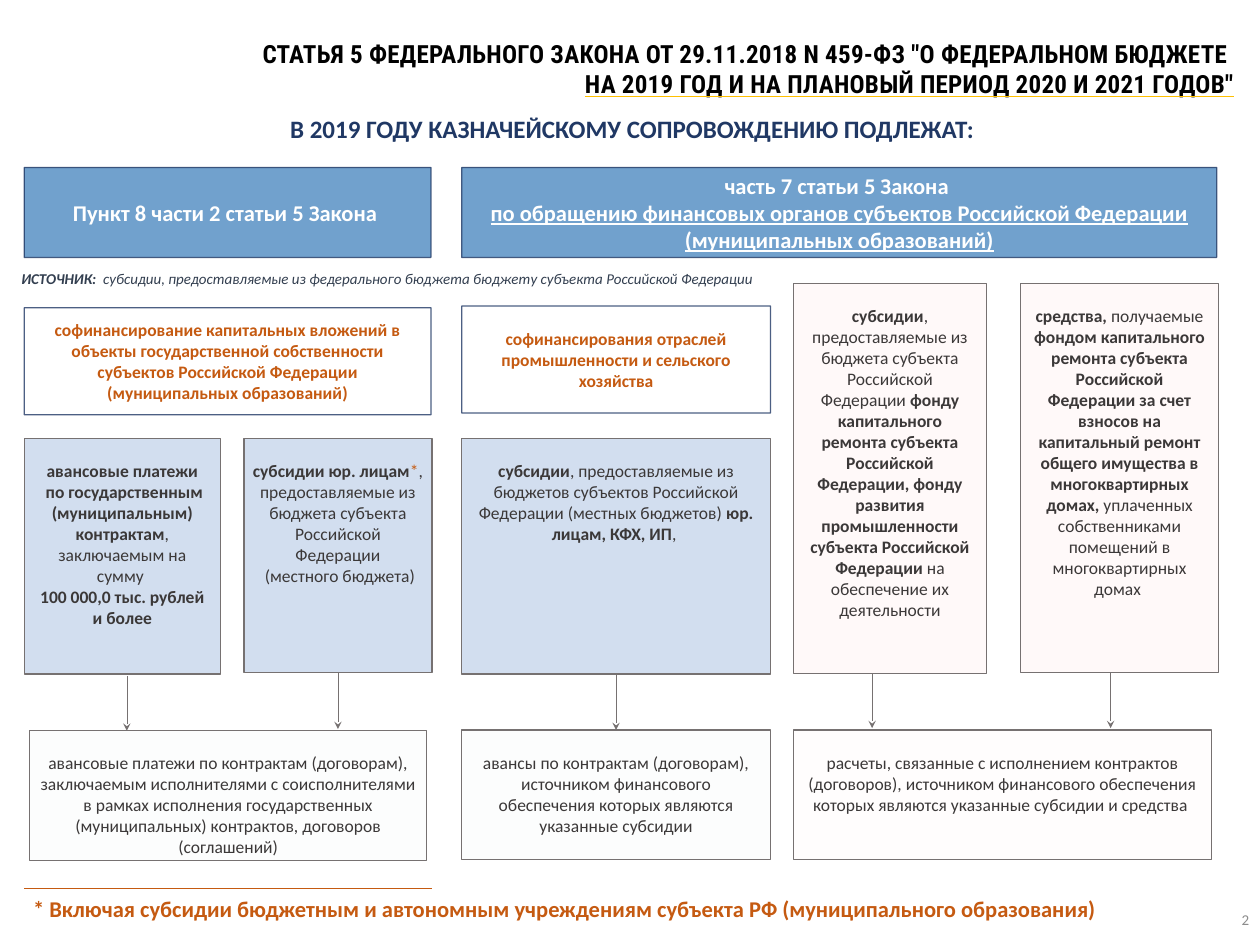
import pptx
import pptx.util
import pptx.dml.color
import pptx.enum.shapes
import pptx.enum.text
import pptx.oxml
import pptx.oxml.ns
import lxml.etree

Pt = pptx.util.Pt
qn = pptx.oxml.ns.qn
Align = pptx.enum.text.PP_ALIGN
Anchor = pptx.enum.text.MSO_ANCHOR
Kind = pptx.enum.shapes.MSO_SHAPE
Link = pptx.enum.shapes.MSO_CONNECTOR

deck = pptx.Presentation()
deck.slide_width, deck.slide_height = Pt(1008), Pt(756)
slide = deck.slides.add_slide(deck.slide_layouts[6])


def hue(code):
    return pptx.dml.color.RGBColor.from_string(code)


def put(text, area, size=14, color="3B3838", bold=False, italic=False, font="Calibri",
        align=Align.CENTER, mid=False, side=8.64, top=4.32, base=4.32,
        fill=None, line=None, alpha=(), grow=False):
    area = [Pt(n) for n in area]
    if line:
        box = slide.shapes.add_shape(Kind.RECTANGLE, *area)
        box.shadow.inherit = False
        if fill:
            box.fill.solid()
            box.fill.fore_color.rgb = hue(fill)
        else:
            box.fill.background()
        box.line.color.rgb = hue(line)
        box.line.width = Pt(1)
        for node, part in zip(box._element.spPr.iter(qn("a:srgbClr")), alpha):
            lxml.etree.SubElement(node, qn("a:alpha")).set("val", str(part * 1000))
    else:
        box = slide.shapes.add_textbox(*area)
    frame = box.text_frame
    frame.word_wrap = True
    if grow:
        frame.auto_size = pptx.enum.text.MSO_AUTO_SIZE.SHAPE_TO_FIT_TEXT
    frame.vertical_anchor = Anchor.MIDDLE if mid else Anchor.TOP
    frame.margin_left = frame.margin_right = Pt(side)
    frame.margin_top, frame.margin_bottom = Pt(top), Pt(base)
    for i, words in enumerate(text.split("\n")):
        para = frame.add_paragraph() if i else frame.paragraphs[0]
        para.alignment = align
        for j, part in enumerate(words.split("|")):
            if part == "\v":
                para.add_line_break()
            elif part:
                run = para.add_run()
                run.text = part
                run.font.size = Pt(size)
                run.font.name = font
                run.font.bold = bold or j % 2 == 1
                run.font.italic = italic
                run.font.color.rgb = hue(color)
    return box


title = put("СТАТЬЯ 5 ФЕДЕРАЛЬНОГО ЗАКОНА ОТ 29.11.2018 N 459-ФЗ \"О ФЕДЕРАЛЬНОМ БЮДЖЕТЕ \n"
            "НА 2019 ГОД И НА ПЛАНОВЫЙ ПЕРИОД 2020 И 2021 ГОДОВ\"",
            (19.4, 26.6, 976.3, 56.9), size=20, color="000000", bold=True,
            font="Roboto Condensed", align=Align.RIGHT, grow=True)
for para in title.text_frame.paragraphs:
    para.runs[0].font._element.set("spc", "20")
under = title.text_frame.paragraphs[1].runs[0].font
under.underline = True
gold = lxml.etree.Element(qn("a:uFill"))
solid = lxml.etree.SubElement(gold, qn("a:solidFill"))
lxml.etree.SubElement(solid, qn("a:srgbClr")).set("val", "FFC000")
under._element.find(qn("a:latin")).addprevious(gold)

put("В 2019 ГОДУ КАЗНАЧЕЙСКОМУ СОПРОВОЖДЕНИЮ ПОДЛЕЖАТ:", (36.7, 86.4, 938.2, 33.1),
    size=20, color="203864", bold=True, grow=True)

left, mid, right = 19.4, 369.4, 635
wide, slim = 325.4, 247
head = dict(size=18, color="FFFFFF", bold=True, mid=True,
            fill="2E75B6", line="203864", alpha=(68, 80))
put("Пункт 8 части 2 статьи 5 Закона ", (left, 134, wide, 72), **head)
law = put("часть 7 статьи 5 Закона \n"
          "по обращению финансовых органов субъектов Российской Федерации\n"
          "(муниципальных образований)", (mid, 134, 604, 72), **head)
for para in law.text_frame.paragraphs[1:]:
    para.runs[0].font.underline = True

put("|ИСТОЧНИК: | субсидии, предоставляемые из федерального бюджета бюджету "
    "субъекта Российской Федерации", (10.1, 212.4, 606.2, 21.6), size=12, color="333F50",
    italic=True, align=Align.LEFT, side=7.2, top=3.6, base=3.6, grow=True)

goal = dict(color="C55A11", bold=True, mid=True, line="203864", alpha=(80,))
put("софинансирование капитальных вложений в объекты государственной собственности "
    "субъектов Российской Федерации (муниципальных образований)",
    (left, 246.2, wide, 85.7), **goal)
put("софинансирования отраслей промышленности и сельского хозяйства",
    (mid, 244.8, slim, 85.7), **goal)

card = dict(top=17.28, line="767171")
blue = dict(card, fill="D2DEEF")
pink = dict(card, fill="FFEFEF", alpha=(33,))
put("|авансовые платежи\n| по государственным (муниципальным) контрактам|, "
    "заключаемым на сумму |\v||100 000,0 тыс. рублей и более",
    (left, 350.6, 157, 188.6), **blue)
firm = put("|субсидии юр. лицам|*||, предоставляемые из бюджета субъекта Российской Федерации\n"
           " (местного бюджета)", (195.1, 350.6, 150.5, 187.2), side=5.76, **blue)
firm.text_frame.paragraphs[0].runs[1].font.color.rgb = hue("C55A11")
farm = put("|субсидии|, предоставляемые из бюджетов субъектов Российской Федерации "
           "(местных бюджетов) |юр. лицам, КФХ, ИП|, ", (mid, 350.6, slim, 188.6), **blue)
put("|субсидии|, предоставляемые из бюджета субъекта Российской Федерации |фонду "
    "капитального ремонта субъекта Российской Федерации, фонду развития промышленности "
    "субъекта Российской Федерации |на обеспечение их деятельности",
    (right, 226.8, 154.1, 311.8), **pink)
put("|средства, |получаемые |фондом капитального ремонта субъекта Российской Федерации "
    "за счет взносов на капитальный ремонт общего имущества в многоквартирных домах, "
    "|уплаченных собственниками помещений в многоквартирных домах ",
    (816.5, 226.8, 158.4, 311), **pink)

pale = dict(card, fill="D6DCE5", alpha=(5,))
put("авансовые платежи по контрактам (договорам), заключаемым исполнителями с "
    "соисполнителями в рамках исполнения государственных (муниципальных) контрактов, "
    "договоров (соглашений)", (23.8, 584.6, 317.5, 103.7), **pale)
advance = put("авансы по контрактам (договорам), источником финансового обеспечения которых "
              "являются указанные субсидии", (mid, 584, slim, 103.7), **pale)
put("расчеты, связанные с исполнением контрактов (договоров), источником финансового "
    "обеспечения которых являются указанные субсидии и средства ",
    (right, 584, 334.1, 103.7), **dict(card, fill="FFEFEF", alpha=(12,)))

grey, rust = ("767171", 0.5, True), ("C55A11", 0.75, False)
for x, y, end, low, style, start, stop in (
        (101.5, 540.7, 101.5, 584.6, grey, None, None),
        (270.35, 537.8, 270.35, 583.2, grey, firm, None),
        (492.9, 539.2, 492.9, 584, grey, farm, advance),
        (697.7, 538.6, 697.7, 582.5, grey, None, None),
        (888.5, 538.6, 888.5, 582.5, grey, None, None),
        (left, 710.6, 345.6, 710.6, rust, None, None)):
    tie = slide.shapes.add_connector(Link.STRAIGHT, Pt(x), Pt(y), Pt(end), Pt(low))
    if start:
        tie.begin_connect(start, 2)
    if stop:
        tie.end_connect(stop, 0)
    color, width, arrow = style
    tie.line.color.rgb = hue(color)
    tie.line.width = Pt(width)
    if arrow:
        lxml.etree.SubElement(tie.line._get_or_add_ln(), qn("a:tailEnd")).set("type", "stealth")
    lxml.etree.SubElement(tie._element.spPr, qn("a:effectLst"))

put("* Включая субсидии бюджетным и автономным учреждениям субъекта РФ "
    "(муниципального образования)", (left, 712.8, 911.5, 28.8), size=18, color="C55A11",
    bold=True, align=Align.LEFT, side=7.2, top=3.6, base=3.6, grow=True)
put("2", (781.2, 715.7, 226.8, 40.3), size=12, color="8C8C8C", align=Align.RIGHT, mid=True)

deck.save("out.pptx")
